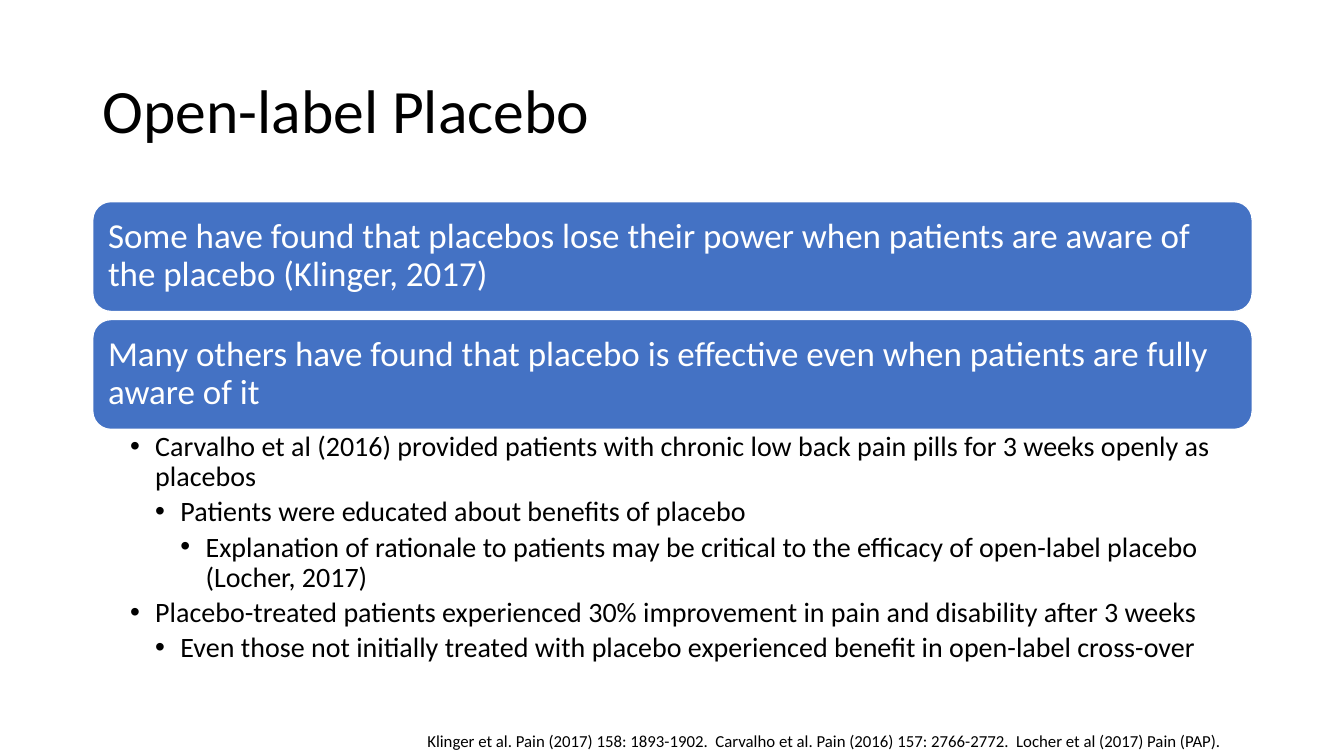
from dataclasses import dataclass

from lxml import etree
from pptx import Presentation
from pptx import util as u
from pptx.dml.color import RGBColor
from pptx.enum import shapes, text
from pptx.oxml.ns import qn

PX = 9144  # 100 px to the inch


@dataclass(frozen=True)
class Theme:
    font: str = "Calibri"
    ink: str = "000000"
    paper: str = "FFFFFF"
    card: str = "4472C4"
    title: int = 44
    claim: int = 25
    point: int = 20
    cite: int = 12


THEME = Theme()

TITLE = "Open-label Placebo"
CLAIMS = [
    "Some have found that placebos lose their power when patients are aware of the placebo (Klinger, 2017)",
    "Many others have found that placebo is effective even when patients are fully aware of it",
]
POINTS = [
    (1, "Carvalho et al (2016) provided patients with chronic low back pain pills for 3 weeks openly as placebos"),
    (2, "Patients were educated about benefits of placebo"),
    (3, "Explanation of rationale to patients may be critical to the efficacy of open-label placebo (Locher, 2017)"),
    (1, "Placebo-treated patients experienced 30% improvement in pain and disability after 3 weeks"),
    (2, "Even those not initially treated with placebo experienced benefit in open-label cross-over"),
]
CITES = ("Klinger et al. Pain (2017) 158: 1893-1902.  Carvalho et al. Pain (2016) 157: 2766-2772.  "
         "Locher et al (2017) Pain (PAP).")


def emu(box):
    return [n * PX for n in box]


def color(code):
    return RGBColor.from_string(code)


def set_frame(frame, pad, anchor):
    """Wrap the text; pad is left, top, right, bottom in px."""
    frame.word_wrap = True
    frame.vertical_anchor = anchor
    (frame.margin_left, frame.margin_top,
     frame.margin_right, frame.margin_bottom) = emu(pad)


def write(para, words, size, ink, lead=0.9):
    para.text = words
    para.alignment = text.PP_ALIGN.LEFT
    para.line_spacing = lead
    para.font.name = THEME.font
    para.font.size = u.Pt(size)
    para.font.color.rgb = color(ink)


def add_bullet(para, level, step):
    props = para._p.get_or_add_pPr()
    props.set("marL", str(level * step * PX))
    props.set("indent", str(-step * PX))
    etree.SubElement(props, qn("a:buFont")).set("typeface", "Arial")
    etree.SubElement(props, qn("a:buChar")).set("char", "•")


def add_label(slide, box, words, size, anchor, lead):
    frame = slide.shapes.add_textbox(*emu(box)).text_frame
    set_frame(frame, (10, 5, 10, 5), anchor)
    write(frame.paragraphs[0], words, size, THEME.ink, lead)


def add_claims(slide, box, claims, gap):
    """Stack one rounded card per claim to fill the box."""
    left, top, width, height = box
    tall = (height - gap * (len(claims) - 1)) // len(claims)
    for i, words in enumerate(claims):
        spot = left, top + i * (tall + gap), width, tall
        card = slide.shapes.add_shape(shapes.MSO_SHAPE.ROUNDED_RECTANGLE, *emu(spot))
        card.shadow.inherit = False
        card.fill.solid()
        card.fill.fore_color.rgb = color(THEME.card)
        card.line.color.rgb = color(THEME.paper)
        card.line.width = u.Pt(1)
        set_frame(card.text_frame, (10, 10, 10, 10), text.MSO_ANCHOR.MIDDLE)
        write(card.text_frame.paragraphs[0], words, THEME.claim, THEME.paper)


def add_points(slide, box, points):
    frame = slide.shapes.add_textbox(*emu(box)).text_frame
    set_frame(frame, (37, 3, 19, 3), text.MSO_ANCHOR.TOP)
    for i, (level, words) in enumerate(points):
        para = frame.add_paragraph() if i else frame.paragraphs[0]
        write(para, words, THEME.point, THEME.ink)
        para.level = level
        para.space_after = u.Pt(3.5)
        add_bullet(para, level, 25)


def build_slide(deck):
    slide = deck.slides.add_slide(deck.slide_layouts[6])
    left, width = 92, 1150
    add_label(slide, (left, 40, width, 145), TITLE, THEME.title, text.MSO_ANCHOR.MIDDLE, 0.9)
    add_claims(slide, (left, 200, width, 226), CLAIMS, 8)
    add_points(slide, (left, 426, width, 249), POINTS)
    add_label(slide, (414, 720, 828, 30), CITES, THEME.cite, text.MSO_ANCHOR.TOP, 1.0)


def main():
    deck = Presentation()
    deck.slide_width, deck.slide_height = emu((1333, 750))
    build_slide(deck)
    deck.save("out.pptx")


if __name__ == "__main__":
    main()
